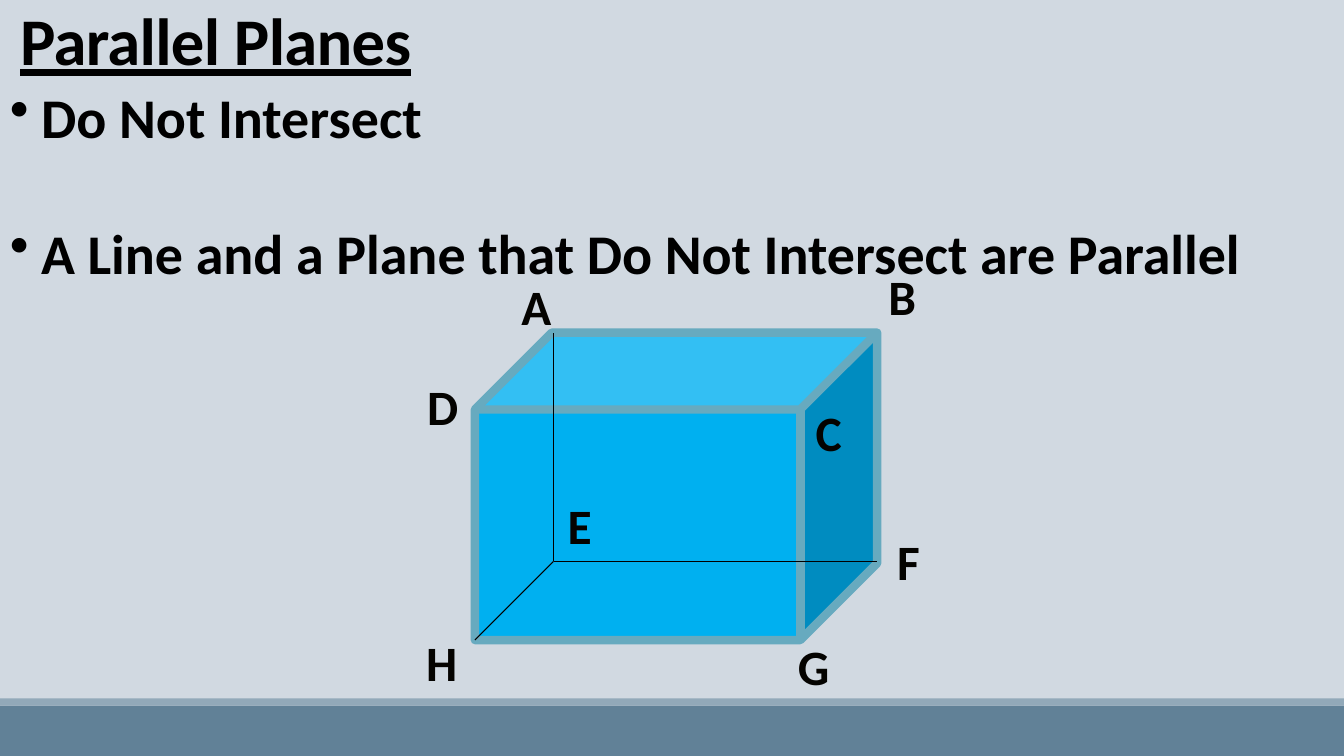
from lxml.etree import SubElement
from pptx import Presentation
from pptx.dml.color import RGBColor
from pptx.enum.shapes import MSO_CONNECTOR, MSO_SHAPE
from pptx.enum.text import MSO_ANCHOR as Anchor, MSO_AUTO_SIZE as AutoSize, PP_ALIGN as Align
from pptx.oxml.ns import qn
from pptx.util import Inches, Pt

SLIDE_W, SLIDE_H = 13.33, 7.5
FONT = "Calibri"
BLACK = "000000"
LABEL_W, LABEL_H = 0.6, 0.82
DEPTH_SHARE = 0.25
HIDDEN_DEPTH = 0.78
STATEMENTS = ["Do Not Intersect", "A Line and a Plane that Do Not Intersect are Parallel"]


def color(value):
    return RGBColor.from_string(value)


def inches(*lengths):
    return [Inches(length) for length in lengths]


def style(paragraph, size, hue):
    font = paragraph.font
    font.name, font.size, font.bold = FONT, Pt(size), True
    font.color.rgb = color(hue)


def add_solid(shapes, preset, box, fill, edge=None, edge_width=0):
    solid = shapes.add_shape(preset, *inches(*box))
    solid.shadow.inherit = False
    solid.fill.solid()
    solid.fill.fore_color.rgb = color(fill)
    if edge:
        solid.line.color.rgb = color(edge)
        solid.line.width = Pt(edge_width)
    else:
        solid.line.fill.background()
    return solid


def add_footer(slide, left, top, width, height):
    stripe = 0.07
    add_solid(slide.shapes, MSO_SHAPE.RECTANGLE, (left, top + stripe, width, height - stripe), "618197")
    add_solid(slide.shapes, MSO_SHAPE.RECTANGLE, (left, top, width, stripe), "92A9B9")


def add_heading(slide, left, top, width, height):
    heading = slide.shapes.title
    heading.left, heading.top, heading.width, heading.height = inches(left, top, width, height)
    frame = heading.text_frame
    frame.text = "Parallel Planes"
    frame.word_wrap = True
    frame.auto_size = AutoSize.NONE
    frame.vertical_anchor = Anchor.BOTTOM
    frame.margin_top = frame.margin_bottom = 0
    paragraph = frame.paragraphs[0]
    paragraph.alignment = Align.LEFT
    paragraph.line_spacing = 0.85
    style(paragraph, 47.6, BLACK)
    paragraph.font.underline = True
    paragraph.runs[0].font._element.set("spc", "-50")


def add_statements(slide, left, top, width, height):
    frame = slide.shapes.add_textbox(*inches(left, top, width, height)).text_frame
    frame.word_wrap = True
    for index, statement in enumerate(STATEMENTS):
        paragraph = frame.add_paragraph() if index else frame.paragraphs[0]
        paragraph.text = statement
        paragraph.space_before = Pt(48.8 * index)
        style(paragraph, 40, BLACK)
        properties = paragraph._p.get_or_add_pPr()
        properties.set("marL", str(Inches(0.31)))
        properties.set("indent", str(-Inches(0.31)))
        bullet = properties.makeelement(qn("a:buChar"), {"char": "•"})
        properties.insert_element_before(bullet, "a:tabLst", "a:defRPr", "a:extLst")


def add_hidden_edge(shapes, start, end):
    edge = shapes.add_connector(MSO_CONNECTOR.STRAIGHT, *inches(*start, *end))
    edge.line.color.rgb = color(BLACK)
    edge.line.width = Pt(0.75)
    SubElement(edge._element.spPr, qn("a:effectLst"))


def add_vertex_label(shapes, letter, vertex, offset):
    left = vertex[0] + offset[0] - LABEL_W / 2
    top = vertex[1] + offset[1] - LABEL_H / 2
    frame = shapes.add_textbox(*inches(left, top, LABEL_W, LABEL_H)).text_frame
    frame.word_wrap = True
    paragraph = frame.paragraphs[0]
    paragraph.text = letter
    paragraph.alignment = Align.CENTER
    style(paragraph, 35.3, "040300")


def add_labelled_cube(slide, left, top, width, height):
    shapes = slide.shapes.add_group_shape().shapes
    cube = add_solid(shapes, MSO_SHAPE.CUBE, (left, top, width, height), "00B0F0", "67AABF", 6)
    cube.adjustments[0] = DEPTH_SHARE

    right, bottom = left + width, top + height
    back_left, front_right = left + HIDDEN_DEPTH, right - HIDDEN_DEPTH
    front_top, back_bottom = top + HIDDEN_DEPTH, bottom - HIDDEN_DEPTH
    vertices = {
        "A": (back_left, top), "B": (right, top),
        "C": (front_right, front_top), "D": (left, front_top),
        "E": (back_left, back_bottom), "F": (right, back_bottom),
        "G": (front_right, bottom), "H": (left, bottom),
    }
    label_offsets = {
        "A": (-0.17, -0.2), "B": (0.25, -0.3), "C": (0.3, 0.27), "D": (-0.32, 0.01),
        "E": (0.26, -0.3), "F": (0.31, 0.06), "G": (0.15, 0.32), "H": (-0.33, 0.28),
    }
    for neighbour in "AHF":
        add_hidden_edge(shapes, vertices["E"], vertices[neighbour])
    for letter, offset in label_offsets.items():
        add_vertex_label(shapes, letter, vertices[letter], offset)


def build_parallel_planes(deck):
    slide = deck.slides.add_slide(deck.slide_layouts[5])
    slide.background.fill.solid()
    slide.background.fill.fore_color.rgb = color("D1D9E1")
    add_footer(slide, 0, SLIDE_H - 0.57, SLIDE_W, 0.57)
    add_heading(slide, 0.1, 0.13, 4.14, 0.66)
    add_statements(slide, 0, 0.77, 12.56, 2.12)
    add_labelled_cube(slide, 4.71, 3.3, 3.99, 3.05)


def main():
    deck = Presentation()
    deck.slide_width, deck.slide_height = inches(SLIDE_W, SLIDE_H)
    build_parallel_planes(deck)
    deck.save("out.pptx")


if __name__ == "__main__":
    main()
